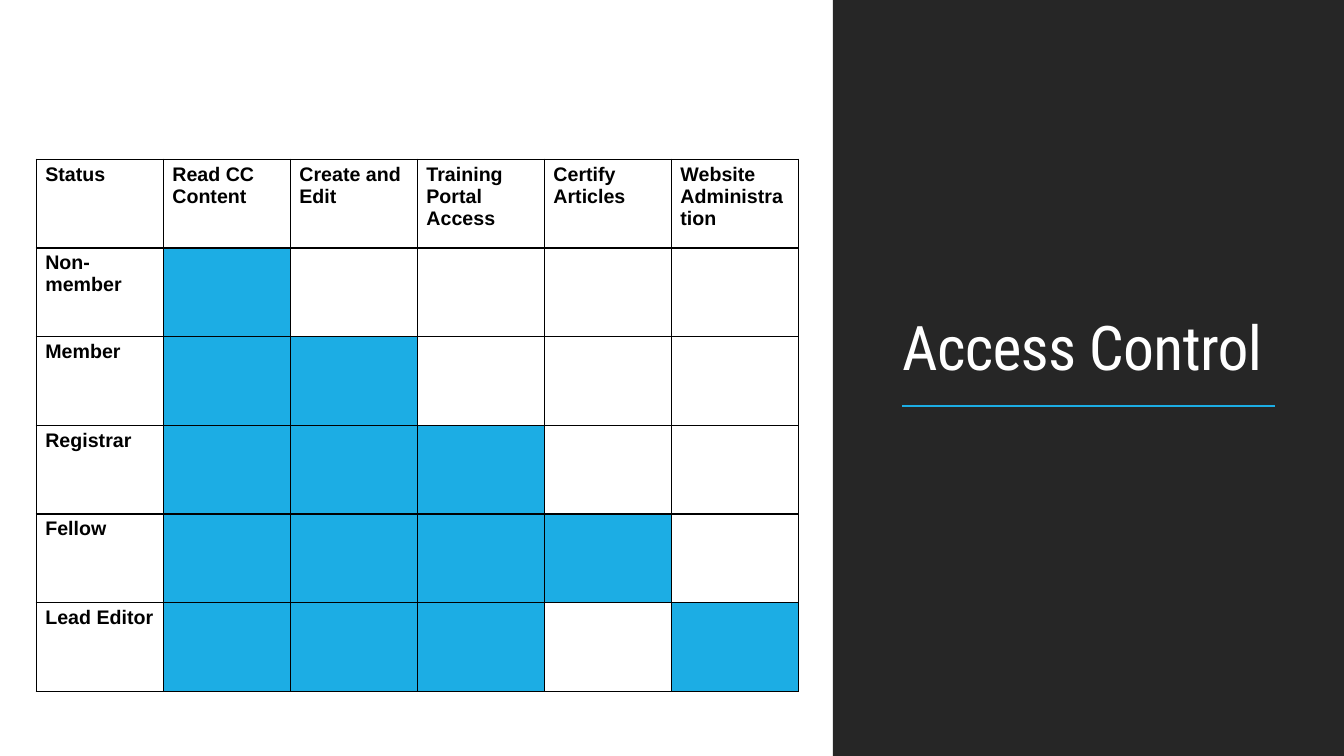
from lxml.etree import SubElement
from pptx import Presentation
from pptx.dml.color import RGBColor
from pptx.enum.shapes import MSO_CONNECTOR, MSO_SHAPE
from pptx.enum.text import MSO_ANCHOR
from pptx.oxml.ns import qn
from pptx.util import Inches, Pt

COLORS = {name: RGBColor.from_string(value) for name, value in {
    "panel": "262626", "white": "FFFFFF", "black": "000000", "blue": "1CADE4",
}.items()}

HEADINGS = ["Status", "Read CC Content", "Create and Edit",
            "Training Portal Access", "Certify Articles", "Website Administration"]
# Each status with the columns it has access to
ACCESS = [
    ("Non-member", {1}),
    ("Member", {1, 2}),
    ("Registrar", {1, 2, 3}),
    ("Fellow", {1, 2, 3, 4}),
    ("Lead Editor", {1, 2, 3, 5}),
]


def add_borders(cell):
    properties = cell._tc.get_or_add_tcPr()
    for position, side in enumerate(("lnL", "lnR", "lnT", "lnB")):
        border = SubElement(properties, qn(f"a:{side}"), w=str(Pt(1)))
        fill = SubElement(border, qn("a:solidFill"))
        SubElement(fill, qn("a:srgbClr"), val=str(COLORS["black"]))
        properties.insert(position, border)


deck = Presentation()
deck.slide_width, deck.slide_height = Inches(13.33), Inches(7.5)
page = deck.slides.add_slide(deck.slide_layouts[6])

# Dark panel on the right
panel = page.shapes.add_shape(MSO_SHAPE.RECTANGLE, Inches(8.26), 0,
                              Inches(5.07), Inches(7.5))
panel.shadow.inherit = False
panel.fill.solid()
panel.fill.fore_color.rgb = COLORS["panel"]
panel.line.fill.background()

# Title
title = page.shapes.add_textbox(Inches(8.85), Inches(0.7), Inches(4), Inches(3.16))
title.text_frame.word_wrap = True
title.text_frame.vertical_anchor = MSO_ANCHOR.BOTTOM
para = title.text_frame.paragraphs[0]
para.line_spacing = 0.9
span = para.add_run()
span.text = "Access Control"
span.font.name = "Roboto Condensed"
span.font.size = Pt(44)
span.font.color.rgb = COLORS["white"]
span._r.get_or_add_rPr().set("spc", "-50")

# Rule under the title
rule = page.shapes.add_connector(MSO_CONNECTOR.STRAIGHT, Inches(8.95), Inches(4.03),
                                 Inches(12.65), Inches(4.03))
rule.line.color.rgb = COLORS["blue"]
rule.line.width = Pt(1.5)
SubElement(rule._element.spPr, qn("a:effectLst"))

# Access table
rows, columns = len(ACCESS) + 1, len(HEADINGS)
table = page.shapes.add_table(rows, columns, Inches(0.36), Inches(1.58),
                              Inches(1.26 * columns), Inches(0.88 * rows)).table
table.first_row = table.horz_banding = False

for row in range(rows):
    status, granted = ACCESS[row - 1] if row else ("", set())
    for column in range(columns):
        cell = table.cell(row, column)
        cell.margin_left = cell.margin_right = Inches(0.09)
        cell.margin_top = cell.margin_bottom = Inches(0.04)
        if column in granted:
            cell.fill.solid()
            cell.fill.fore_color.rgb = COLORS["blue"]
        else:
            cell.fill.background()
        add_borders(cell)
        if row == 0 or column == 0:
            cell.text = status if row else HEADINGS[column]
            font = cell.text_frame.paragraphs[0].font
            font.name = "Arial"
            font.size = Pt(14)
            font.bold = True
            font.color.rgb = COLORS["black"]

deck.save("out.pptx")
